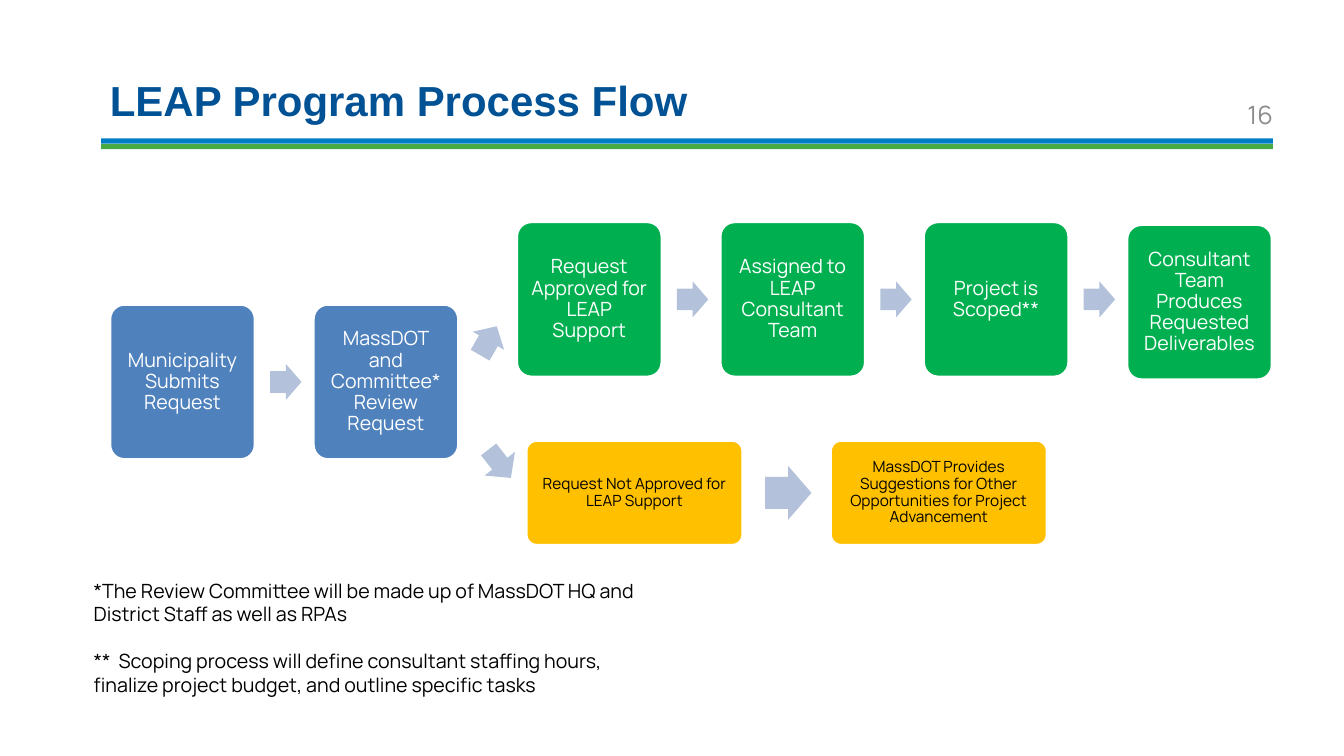
from dataclasses import dataclass

import pptx
import pptx.dml.color
import pptx.enum.shapes
import pptx.enum.text
import pptx.util

Cm = pptx.util.Cm
Pt = pptx.util.Pt
Shape = pptx.enum.shapes.MSO_SHAPE
Align = pptx.enum.text.PP_ALIGN
Anchor = pptx.enum.text.MSO_ANCHOR

COLORS = {
    "title": "005295", "number": "8C8C8C", "blue bar": "007DC3", "green bar": "49A942",
    "review": "4F81BD", "approved": "00B050", "declined": "FFC000", "arrow": "B3C1DB",
    "white": "FFFFFF", "black": "000000",
}
BODY_FONT = "Manrope"
FIRST_COLUMN, COLUMN_STEP = 2.77, 5.126


@dataclass(frozen=True)
class Area:
    """Left, top, width and height in centimetres."""
    left: float
    top: float
    width: float
    height: float

    def lengths(self) -> list:
        return [Cm(v) for v in (self.left, self.top, self.width, self.height)]


@dataclass(frozen=True)
class Style:
    size: float
    color: str
    font: str = BODY_FONT
    bold: bool = False
    align: Align = Align.LEFT


@dataclass(frozen=True)
class Step:
    text: str
    area: Area
    fill: str
    style: Style


@dataclass(frozen=True)
class Arrow:
    area: Area
    rotation: float = 0
    shaft: float = 0.6


def rgb(name: str) -> pptx.dml.color.RGBColor:
    return pptx.dml.color.RGBColor.from_string(COLORS[name])


def style_paragraph(para, style: Style) -> None:
    para.alignment = style.align
    para.font.size = Pt(style.size)
    para.font.name = style.font
    para.font.bold = style.bold
    para.font.color.rgb = rgb(style.color)


def set_margins(frame, across: float, down: float) -> None:
    frame.margin_left = frame.margin_right = Cm(across)
    frame.margin_top = frame.margin_bottom = Cm(down)


def add_text(page, area: Area, texts: list[str], style: Style,
             across: float = 0, down: float = 0, gap: float = 0) -> None:
    """Text box with one paragraph per text, gap points apart."""
    frame = page.shapes.add_textbox(*area.lengths()).text_frame
    frame.word_wrap = True
    set_margins(frame, across, down)
    for index, text in enumerate(texts):
        para = frame.add_paragraph() if index else frame.paragraphs[0]
        para.text = text
        para.space_before = Pt(gap if index else 0)
        style_paragraph(para, style)


def add_filled(page, kind: Shape, area: Area, fill: str):
    shape = page.shapes.add_shape(kind, *area.lengths())
    shape.shadow.inherit = False
    shape.fill.solid()
    shape.fill.fore_color.rgb = rgb(fill)
    shape.line.fill.background()
    return shape


def add_step(page, step: Step) -> None:
    box = add_filled(page, Shape.ROUNDED_RECTANGLE, step.area, step.fill)
    box.adjustments[0] = 0.1
    box.line.color.rgb = rgb("white")
    box.line.width = Pt(2)
    frame = box.text_frame
    frame.word_wrap = True
    frame.vertical_anchor = Anchor.MIDDLE
    set_margins(frame, 0.24, 0.24)
    para = frame.paragraphs[0]
    para.text = step.text
    para.line_spacing = 0.9
    style_paragraph(para, step.style)


def add_arrow(page, arrow: Arrow) -> None:
    shape = add_filled(page, Shape.RIGHT_ARROW, arrow.area, "arrow")
    shape.adjustments[0] = arrow.shaft
    shape.adjustments[1] = 0.5
    shape.rotation = arrow.rotation


def arrow_between(start: Step, end: Step, width: float, height: float) -> Arrow:
    """Arrow in the gap between two steps, level with the first."""
    middle = (start.area.left + start.area.width + end.area.left) / 2 + 0.04
    center = start.area.top + start.area.height / 2
    return Arrow(Area(middle - width / 2, center - height / 2, width, height))


def main() -> None:
    deck = pptx.Presentation()
    deck.slide_width, deck.slide_height = Cm(33.87), Cm(19.05)
    page = deck.slides.add_slide(deck.slide_layouts[6])

    for color, top in (("green bar", 3.63), ("blue bar", 3.49)):
        add_filled(page, Shape.RECTANGLE, Area(2.55, top, 29.53, 0.13), color)
    add_text(page, Area(2.77, 1.88, 28.32, 1.27), ["LEAP Program Process Flow"],
             Style(30, "title", font="Arial", bold=True))
    add_text(page, Area(24.28, 2.51, 7.8, 0.97), ["16"],
             Style(18, "number", align=Align.RIGHT))

    main_style = Style(14, "white", align=Align.CENTER)
    main_steps = [
        Step(text, Area(FIRST_COLUMN + COLUMN_STEP * column, top, 3.66, 3.91), fill, main_style)
        for column, (text, top, fill) in enumerate([
            ("Municipality Submits Request", 7.67, "review"),
            ("MassDOT and Committee* Review Request", 7.67, "review"),
            ("Request Approved for LEAP Support", 5.59, "approved"),
            ("Assigned to LEAP Consultant Team", 5.59, "approved"),
            ("Project is Scoped**", 5.59, "approved"),
            ("Consultant Team Produces Requested Deliverables", 5.66, "approved"),
        ])
    ]
    declined_style = Style(11, "black", align=Align.CENTER)
    declined_steps = [
        Step(text, Area(left, 11.1, 5.46, 2.64), "declined", declined_style)
        for text, left in [
            ("Request Not Approved for LEAP Support", 13.26),
            ("MassDOT Provides Suggestions for Other Opportunities for Project Advancement", 20.93),
        ]
    ]
    for step in main_steps + declined_steps:
        add_step(page, step)

    arrows = [arrow_between(main_steps[i], main_steps[i + 1], 0.79, 0.91) for i in (0, 2, 3, 4)]
    arrows += [
        arrow_between(*declined_steps, 1.17, 1.35),
        Arrow(Area(11.89, 8.13, 0.84, 0.91), rotation=300),
        Arrow(Area(12.14, 11.2, 0.91, 0.97), rotation=52, shaft=0.5),
    ]
    for arrow in arrows:
        add_arrow(page, arrow)

    add_text(page, Area(2.11, 14.45, 14.81, 3.25), [
        "*The Review Committee will be made up of MassDOT HQ and District Staff as well as RPAs",
        "**  Scoping process will define consultant staffing hours, "
        "finalize project budget, and outline specific tasks",
    ], Style(14, "black"), across=0.25, down=0.13, gap=16.8)

    deck.save("out.pptx")


if __name__ == "__main__":
    main()
